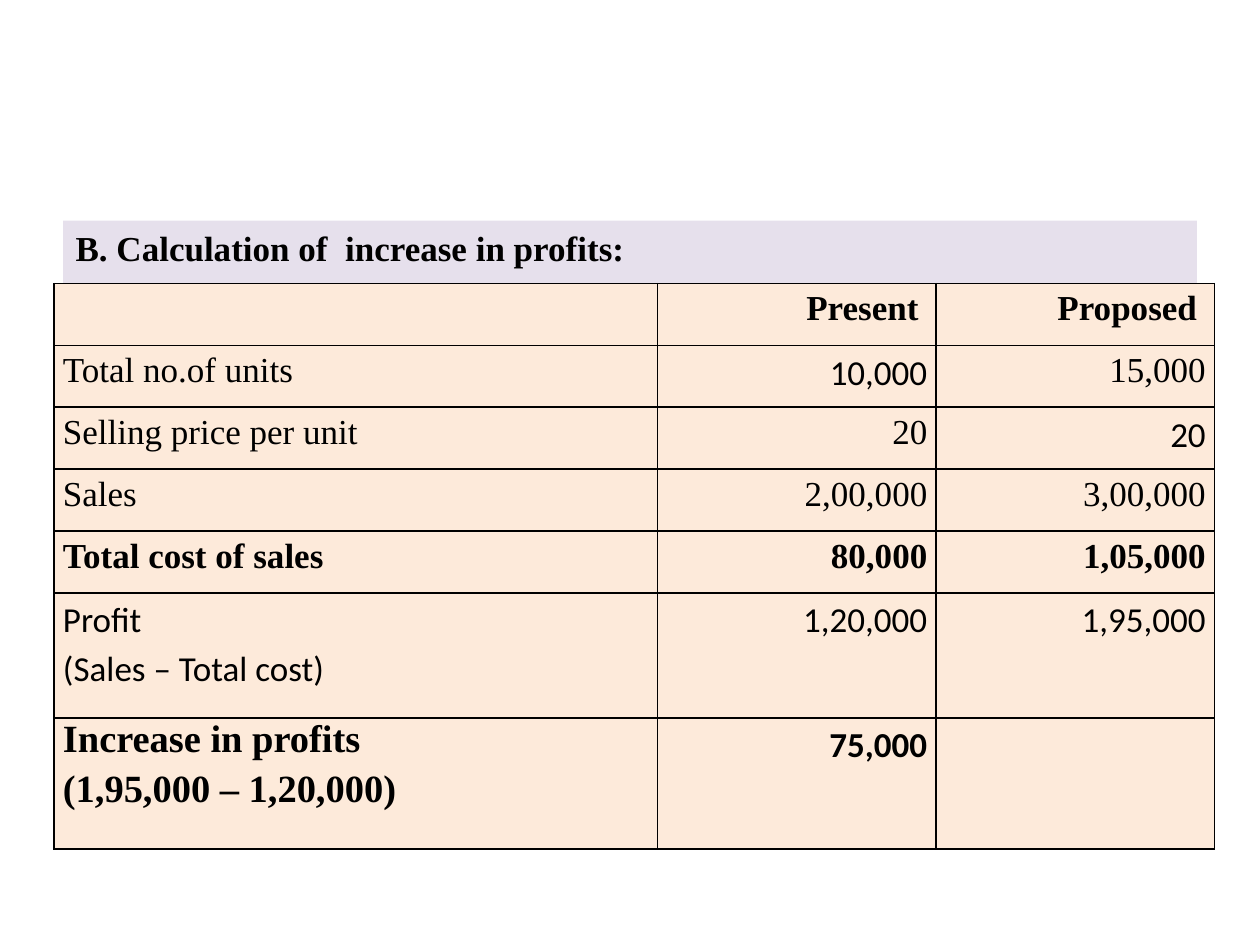
import pptx
import pptx.dml.color
import pptx.enum.text
import pptx.oxml
import pptx.oxml.ns
import pptx.util

Inches = pptx.util.Inches
Pt = pptx.util.Pt
ALIGN = pptx.enum.text.PP_ALIGN

COLORS = {"ink": "000000", "heading": "E6E0EC", "cell": "FDEADA"}
SERIF = "Times New Roman"
SANS = "Calibri"

COLUMN_WIDTHS = [4.79, 2.21, 2.21]
ROW_HEIGHTS = [0.49] * 5 + [0.99, 1.04]
PROFIT_ROWS = [
    ["", "Present ", "Proposed "],
    ["Total no.of units", "10,000", "15,000"],
    ["Selling price per unit", "20", "20"],
    ["Sales", "2,00,000", "3,00,000"],
    ["Total cost of sales", "80,000", "1,05,000"],
    ["Profit\n(Sales – Total cost)", "1,20,000", "1,95,000"],
    ["Increase in profits\n(1,95,000 – 1,20,000)", "75,000", ""],
]
BOLD_ROWS = {0, 4, 6}
SANS_CELLS = {(1, 1), (2, 2), (5, 0), (5, 1), (5, 2), (6, 1)}
CLOSING_LABEL = (6, 0)


def rgb(name):
    return pptx.dml.color.RGBColor.from_string(COLORS[name])


def write_text(frame, text, size=20, font=SERIF, bold=False, align=ALIGN.LEFT,
               line_spacing=1.0, space_before=0):
    frame.word_wrap = True
    for index, line in enumerate(text.split("\n")):
        paragraph = frame.paragraphs[0] if index == 0 else frame.add_paragraph()
        paragraph.alignment = align
        paragraph.line_spacing = line_spacing
        paragraph.space_before = Pt(space_before)
        run = paragraph.add_run()
        run.text = line
        run.font.size = Pt(size)
        run.font.name = font
        run.font.bold = bold
        run.font.color.rgb = rgb("ink")


def add_borders(cell):
    properties = cell._tc.get_or_add_tcPr()
    for position, side in enumerate(("lnL", "lnR", "lnT", "lnB")):
        border = pptx.oxml.parse_xml(
            f'<a:{side} {pptx.oxml.ns.nsdecls("a")} w="{Pt(1)}"><a:solidFill>'
            f'<a:srgbClr val="{COLORS["ink"]}"/></a:solidFill></a:{side}>')
        properties.insert(position, border)


def place_heading(slide, left, top, width, height):
    heading = slide.shapes.title
    heading.left, heading.top = Inches(left), Inches(top)
    heading.width, heading.height = Inches(width), Inches(height)
    heading.fill.solid()
    heading.fill.fore_color.rgb = rgb("heading")
    frame = heading.text_frame
    frame.auto_size = pptx.enum.text.MSO_AUTO_SIZE.NONE
    frame.vertical_anchor = pptx.enum.text.MSO_ANCHOR.TOP
    write_text(frame, "B. Calculation of  increase in profits:", bold=True,
               space_before=4)


def place_profit_table(slide, left, top, width, height):
    profits = slide.shapes.add_table(
        len(ROW_HEIGHTS), len(COLUMN_WIDTHS),
        Inches(left), Inches(top), Inches(width), Inches(height)).table
    for column, share in zip(profits.columns, COLUMN_WIDTHS):
        column.width = Inches(width * share / sum(COLUMN_WIDTHS))
    for row, share in zip(profits.rows, ROW_HEIGHTS):
        row.height = Inches(height * share / sum(ROW_HEIGHTS))
    for r, entries in enumerate(PROFIT_ROWS):
        for c, entry in enumerate(entries):
            cell = profits.cell(r, c)
            cell.margin_left = cell.margin_right = Inches(0.07)
            cell.margin_top = cell.margin_bottom = 0
            cell.fill.solid()
            cell.fill.fore_color.rgb = rgb("cell")
            add_borders(cell)
            if not entry:
                continue
            closing = (r, c) == CLOSING_LABEL
            write_text(cell.text_frame, entry,
                       size=22 if closing else 20,
                       font=SANS if (r, c) in SANS_CELLS else SERIF,
                       bold=r in BOLD_ROWS,
                       align=ALIGN.RIGHT if c else ALIGN.LEFT,
                       line_spacing=1.0 if closing else 1.15,
                       space_before=4.4 if closing else 0)


def main():
    deck = pptx.Presentation()
    deck.slide_width, deck.slide_height = Inches(10), Inches(7.5)
    slide = deck.slides.add_slide(deck.slide_layouts[5])
    place_heading(slide, 0.5, 1.75, 9, 4.95)
    place_profit_table(slide, 0.43, 2.25, 9.21, 4.49)
    deck.save("out.pptx")


if __name__ == "__main__":
    main()
